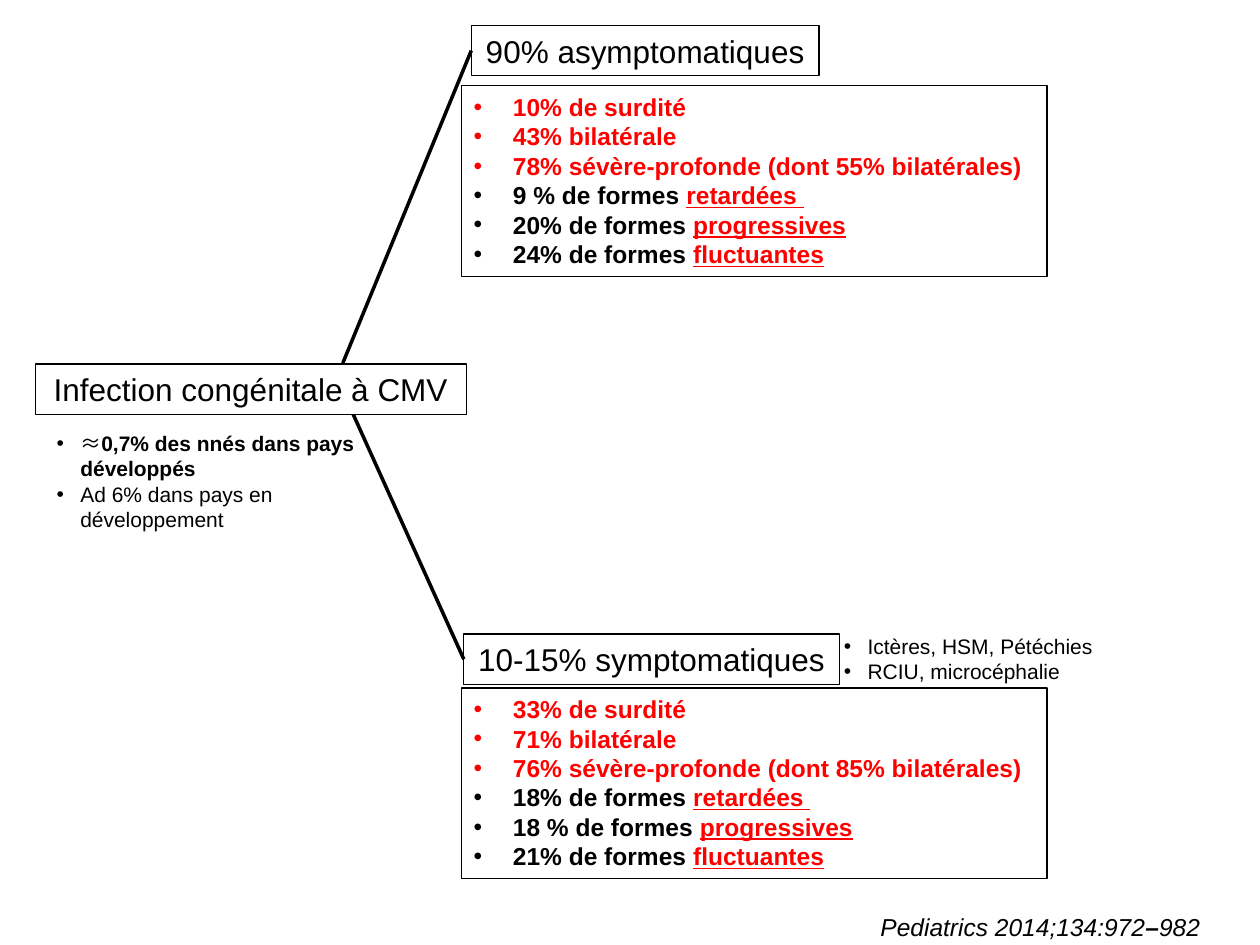
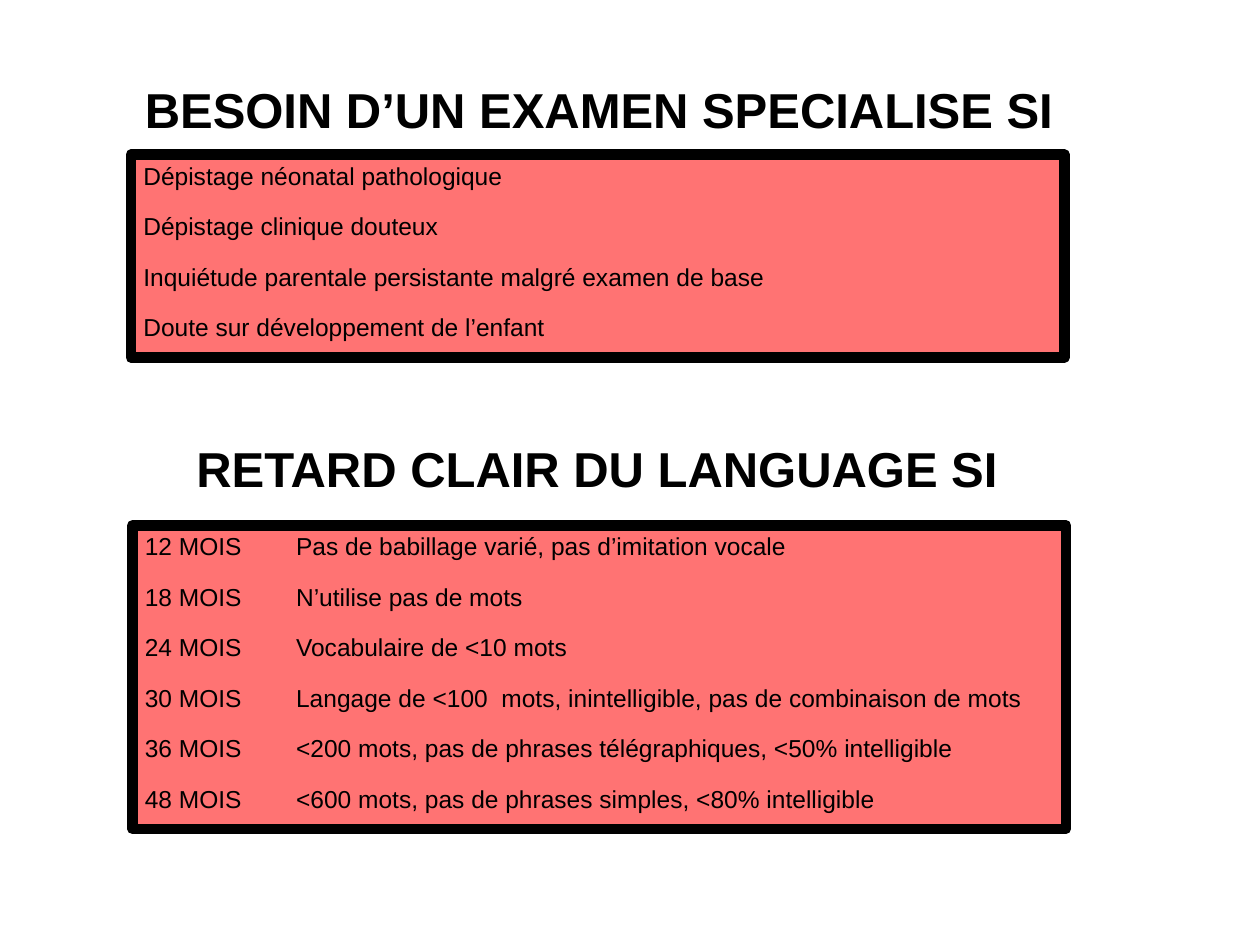
from lxml.etree import SubElement
from pptx import Presentation
from pptx.dml.color import RGBColor
from pptx.enum.shapes import MSO_CONNECTOR, MSO_SHAPE
from pptx.enum.text import MSO_ANCHOR, PP_ALIGN
from pptx.oxml.ns import qn
from pptx.util import Cm, Pt

COLORS = {"ink": "000000", "paper": "FFFFFF", "alert": "FF0000"}
FONT = "Arial"
SYMBOL_FONT = "Noto Sans CJK JP"
PANEL_OPACITY = 55
LABEL_HEIGHT = 1.02
LIST_LEFT = 9.3
TITLE_HEIGHT = 1.45
PANEL_WIDTH = 18.82


def color(name):
    return RGBColor.from_string(COLORS[name])


def add_run(paragraph, text, size, tint="ink", bold=False, italic=False,
            underline=False, font_name=FONT):
    run = paragraph.add_run()
    run.text = text
    font = run.font
    font.size = Pt(size)
    font.bold, font.italic, font.underline = bold, italic, underline
    font.color.rgb = color(tint)
    font.name = font_name
    if font_name != FONT:
        SubElement(run._r.get_or_add_rPr(), qn("a:ea"), typeface=font_name)


def set_indent(paragraph, margin, hanging, bullet=False, tab=None):
    properties = paragraph._p.get_or_add_pPr()
    properties.set("marL", str(Cm(margin)))
    properties.set("indent", str(-Cm(hanging)))
    if bullet:
        SubElement(properties, qn("a:buFont"), typeface=FONT)
        SubElement(properties, qn("a:buChar"), char="•")
    if tab:
        tabs = SubElement(properties, qn("a:tabLst"))
        SubElement(tabs, qn("a:tab"), pos=str(Cm(tab)), algn="l")


def paragraphs_for(text_frame, items):
    for index, item in enumerate(items):
        paragraph = text_frame.add_paragraph() if index else text_frame.paragraphs[0]
        yield index, paragraph, item


def add_rectangle(slide, left, top, width, height, line_width, fill=None):
    shape = slide.shapes.add_shape(
        MSO_SHAPE.RECTANGLE, Cm(left), Cm(top), Cm(width), Cm(height))
    shape.shadow.inherit = False
    shape.line.color.rgb = color("ink")
    shape.line.width = Pt(line_width)
    if fill:
        shape.fill.solid()
        shape.fill.fore_color.rgb = color(fill)
    else:
        shape.fill.background()
    shape.text_frame.word_wrap = True
    shape.text_frame.vertical_anchor = MSO_ANCHOR.TOP
    return shape


def add_text_box(slide, left, top, width, height, wrap=True):
    text_box = slide.shapes.add_textbox(Cm(left), Cm(top), Cm(width), Cm(height))
    text_box.text_frame.word_wrap = wrap
    return text_box.text_frame


def add_label(slide, left, top, width, text, fill=None):
    label = add_rectangle(slide, left, top, width, LABEL_HEIGHT, 0.75, fill)
    label.text_frame.word_wrap = False
    label.text_frame.vertical_anchor = MSO_ANCHOR.MIDDLE
    paragraph = label.text_frame.paragraphs[0]
    paragraph.alignment = PP_ALIGN.CENTER
    add_run(paragraph, text, 18)
    return label


def add_branch(slide, left, top, label):
    branch = slide.shapes.add_connector(
        MSO_CONNECTOR.STRAIGHT, Cm(left), Cm(top), label.left, label.top)
    branch.end_connect(label, 1)
    branch.line.color.rgb = color("ink")
    branch.line.width = Pt(2)
    SubElement(branch._element.spPr, qn("a:effectLst"))


def add_hearing_list(slide, top, losses, forms):
    box = add_rectangle(slide, LIST_LEFT, top, 11.81, 3.84, 0.75, "paper")
    rows = [(loss, None) for loss in losses] + forms
    for _, paragraph, (text, form) in paragraphs_for(box.text_frame, rows):
        paragraph.alignment = PP_ALIGN.LEFT
        set_indent(paragraph, 0.79, 0.79, bullet=True, tab=1.47)
        add_run(paragraph, text, 14, "ink" if form else "alert", bold=True)
        if form:
            add_run(paragraph, form, 14, "alert", bold=True, underline=True)


def add_notes_list(slide, left, top, width, height, margin, items):
    text_frame = add_text_box(slide, left, top, width, height)
    for _, paragraph, runs in paragraphs_for(text_frame, items):
        set_indent(paragraph, margin, 0.48, bullet=True)
        for text, style in runs:
            add_run(paragraph, text, 12, **style)


def add_title(slide, left, top, width, text):
    text_frame = add_text_box(slide, left, top, width, TITLE_HEIGHT, wrap=False)
    add_run(text_frame.paragraphs[0], text, 28, bold=True)


def add_panel(slide, left, top, height, lines):
    panel = add_rectangle(slide, left, top, PANEL_WIDTH, height, 6, "alert")
    fill_color = panel._element.spPr.find(qn("a:solidFill"))[0]
    SubElement(fill_color, qn("a:alpha"), val=str(PANEL_OPACITY * 1000))
    for index, paragraph, line in paragraphs_for(panel.text_frame, lines):
        paragraph.alignment = PP_ALIGN.LEFT
        paragraph.space_before = Pt(6 if index else 0)
        paragraph.space_after = Pt(6)
        set_indent(paragraph, 0.51, 0.51, tab=1.5)
        add_run(paragraph, line, 14)


def build_infection_slide(slide):
    asymptomatic = add_label(slide, 9.5, 0.51, 7.01, "90% asymptomatiques")
    symptomatic = add_label(slide, 9.35, 12.78, 7.57, "10-15% symptomatiques", "paper")
    add_branch(slide, 6.91, 7.32, asymptomatic)
    add_branch(slide, 7.11, 8.33, symptomatic)
    add_label(slide, 0.71, 7.34, 8.69, "Infection congénitale à CMV", "paper")
    add_hearing_list(
        slide, 1.73,
        ["10% de surdité", "43% bilatérale",
         "78% sévère-profonde (dont 55% bilatérales)"],
        [("9 % de formes ", "retardées "), ("20% de formes ", "progressives"),
         ("24% de formes ", "fluctuantes")])
    add_hearing_list(
        slide, 13.87,
        ["33% de surdité", "71% bilatérale",
         "76% sévère-profonde (dont 85% bilatérales)"],
        [("18% de formes ", "retardées "), ("18 % de formes ", "progressives"),
         ("21% de formes ", "fluctuantes")])
    add_notes_list(slide, 0.89, 8.56, 6.6, 2.31, 0.48, [
        [("≈", {"font_name": SYMBOL_FONT}),
         ("0,7% des nnés dans pays développés", {"bold": True})],
        [("Ad 6% dans pays en développement", {})]])
    add_notes_list(slide, 15.49, 12.65, 9.4, 1.27, 1.75, [
        [("Ictères, HSM, Pétéchies", {})],
        [("RCIU, microcéphalie", {})]])
    citation = add_text_box(slide, 17.5, 18.26, 7.59, 0.86).paragraphs[0]
    for text, bold in [("Pediatrics 2014;134:972", False), ("–", True), ("982", False)]:
        add_run(citation, text, 14, bold=bold, italic=True)


def build_referral_slide(slide):
    add_title(slide, 2.67, 1.47, 18.82, "BESOIN D’UN EXAMEN SPECIALISE SI")
    add_panel(slide, 2.64, 3.12, 4.09, [
        "Dépistage néonatal pathologique",
        "Dépistage clinique douteux",
        "Inquiétude parentale persistante malgré examen de base",
        "Doute sur développement de l’enfant"])
    add_title(slide, 3.71, 8.71, 16.76, "RETARD CLAIR DU LANGUAGE SI")
    delays = {
        12: "Pas de babillage varié, pas d’imitation vocale",
        18: "N’utilise pas de mots",
        24: "Vocabulaire de <10 mots",
        30: "Langage de <100  mots, inintelligible, pas de combinaison de mots",
        36: "<200 mots, pas de phrases télégraphiques, <50% intelligible",
        48: "<600 mots, pas de phrases simples, <80% intelligible"}
    add_panel(slide, 2.67, 10.59, 6.12,
              [f"{months} MOIS\t{sign}" for months, sign in delays.items()])


def main():
    presentation = Presentation()
    presentation.slide_width, presentation.slide_height = Cm(25.4), Cm(19.05)
    for build in (build_infection_slide, build_referral_slide):
        build(presentation.slides.add_slide(presentation.slide_layouts[6]))
    presentation.save("out.pptx")


if __name__ == "__main__":
    main()
